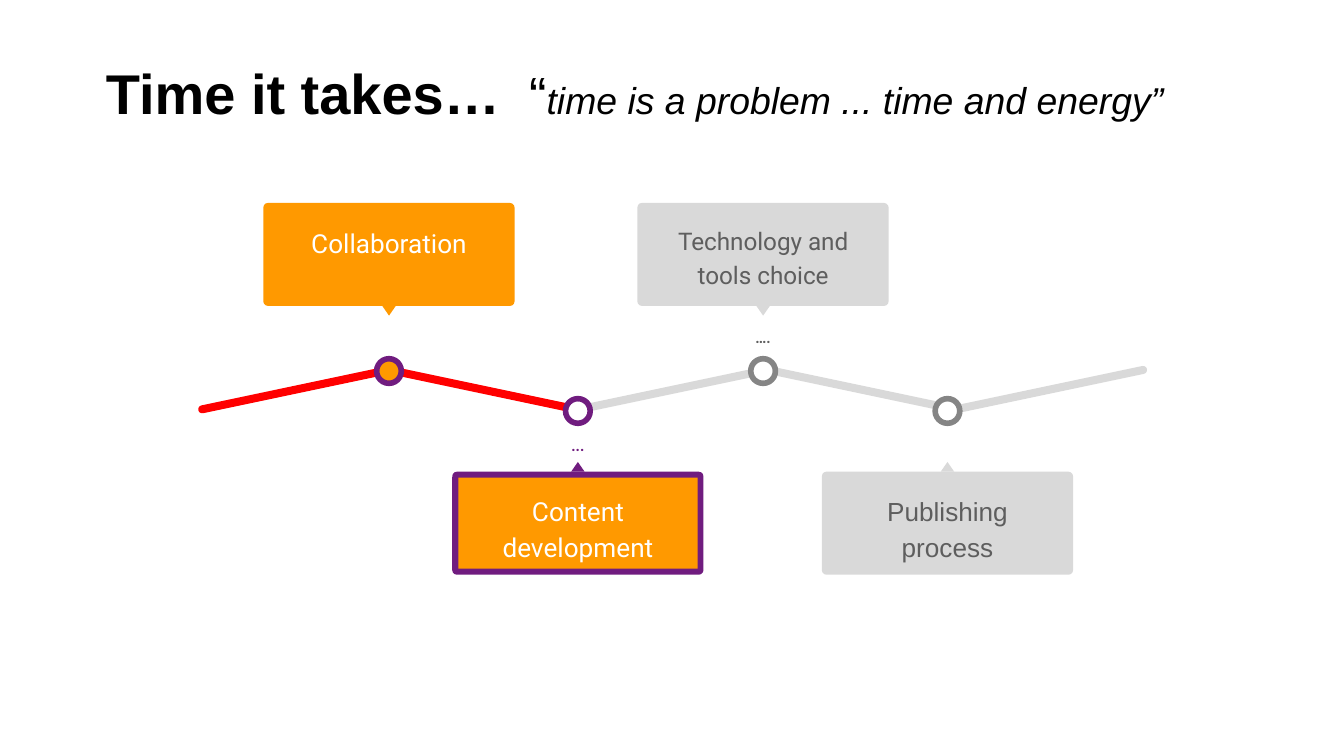
from dataclasses import dataclass

from pptx import Presentation
from pptx.dml.color import RGBColor
from pptx.enum.shapes import MSO_SHAPE as Preset
from pptx.enum.text import MSO_ANCHOR as Anchor, PP_ALIGN as Align
from pptx.util import Pt

WHITE = RGBColor(0xFF, 0xFF, 0xFF)
BLACK = RGBColor(0x00, 0x00, 0x00)
RED = RGBColor(0xFF, 0x00, 0x00)
ORANGE = RGBColor(0xFF, 0x99, 0x00)
PURPLE = RGBColor(0x70, 0x1C, 0x7F)
LIGHT_GRAY = RGBColor(0xD9, 0xD9, 0xD9)
MID_GRAY = RGBColor(0x85, 0x85, 0x85)
DARK_GRAY = RGBColor(0x5E, 0x5E, 0x5E)

# Timeline geometry, in points
BAR_WIDTH, BAR_HEIGHT, BAR_TOP, BAR_TILT = 106.6, 4.3, 206.6, 11.9
CARD_WIDTH, CARD_HEIGHT, CARD_BORDER = 134.6, 55.2, 3.2
POINTER_WIDTH, POINTER_HEIGHT = 7.2, 5.2
NODE_SIZE = 13.2
DOTS_WIDTH, DOTS_HEIGHT = 54.7, 21.6


@dataclass
class Milestone:
    center: float
    above: bool
    label: str
    frame: RGBColor
    panel: RGBColor
    ink: RGBColor
    node_fill: RGBColor
    node_line: RGBColor
    font: str = "Roboto"
    size: int = 14
    dots: str = ""


MILESTONES = [
    Milestone(507.6, False, "Publishing process", LIGHT_GRAY, LIGHT_GRAY,
              DARK_GRAY, WHITE, MID_GRAY, font="Arial"),
    Milestone(309.6, False, "Content development", PURPLE, ORANGE,
              WHITE, WHITE, PURPLE, dots="..."),
    Milestone(208.4, True, "Collaboration", ORANGE, ORANGE,
              WHITE, ORANGE, PURPLE),
    Milestone(408.8, True, "Technology and tools choice", LIGHT_GRAY, LIGHT_GRAY,
              DARK_GRAY, WHITE, MID_GRAY, size=13, dots="…."),
]

# Bar centres with colours, from right to left; tilt alternates
BARS = [(562.3, LIGHT_GRAY), (461.5, LIGHT_GRAY), (360.7, LIGHT_GRAY),
        (258.5, RED), (158.4, RED)]


def add_box(slide, preset, left, top, width, height, fill, line=None, weight=0):
    shape = slide.shapes.add_shape(preset, Pt(left), Pt(top), Pt(width), Pt(height))
    shape.shadow.inherit = False
    shape.fill.solid()
    shape.fill.fore_color.rgb = fill
    if line is None:
        shape.line.fill.background()
    else:
        shape.line.color.rgb = line
        shape.line.width = Pt(weight)
    return shape


def prepare_frame(shape, top_inset=7.2):
    frame = shape.text_frame
    settings = dict(word_wrap=True, vertical_anchor=Anchor.TOP,
                    margin_left=Pt(7.2), margin_right=Pt(7.2),
                    margin_top=Pt(top_inset), margin_bottom=Pt(7.2))
    for name, value in settings.items():
        setattr(frame, name, value)
    return frame.paragraphs[0]


def add_run(paragraph, text, color, **font_values):
    run = paragraph.add_run()
    run.text = text
    run.font.color.rgb = color
    for name, value in font_values.items():
        setattr(run.font, name, value)


def write_label(shape, text, color, **font_values):
    paragraph = prepare_frame(shape)
    settings = dict(alignment=Align.CENTER, line_spacing=1.15, space_after=Pt(16))
    for name, value in settings.items():
        setattr(paragraph, name, value)
    add_run(paragraph, text, color, **font_values)


def add_title(slide):
    shape = add_box(slide, Preset.RECTANGLE, 49.7, 21.6, 620.6, 78.5, WHITE, WHITE, 0.75)
    paragraph = prepare_frame(shape, top_inset=9.8)
    paragraph.alignment = Align.LEFT
    parts = [
        ("Time it takes…", dict(size=Pt(30), bold=True)),
        ("  “", dict(size=Pt(28))),
        ("time is a problem ... time and energy”", dict(size=Pt(20), italic=True)),
    ]
    for text, values in parts:
        add_run(paragraph, text, BLACK, name="Arial", **values)


def add_bar(slide, center, color, tilt):
    bar = add_box(slide, Preset.ROUNDED_RECTANGLE, center - BAR_WIDTH / 2, BAR_TOP,
                  BAR_WIDTH, BAR_HEIGHT, color)
    bar.adjustments[0] = 0.5
    bar.rotation = tilt


def add_milestone(slide, milestone):
    center, above = milestone.center, milestone.above
    card_top = 108.7 if above else 252.7
    pointer_top = card_top + CARD_HEIGHT if above else card_top - POINTER_HEIGHT
    node_top = 192.2 if above else 213.6
    dots_top = 169.2 if above else 226.8

    # Card with its pointer and text panel
    card = add_box(slide, Preset.ROUNDED_RECTANGLE, center - CARD_WIDTH / 2, card_top,
                   CARD_WIDTH, CARD_HEIGHT, milestone.frame)
    card.adjustments[0] = 0.045
    pointer = add_box(slide, Preset.ISOSCELES_TRIANGLE, center - POINTER_WIDTH / 2,
                      pointer_top, POINTER_WIDTH, POINTER_HEIGHT, milestone.frame)
    pointer.rotation = 180 if above else 0
    panel = add_box(slide, Preset.RECTANGLE, center - CARD_WIDTH / 2 + CARD_BORDER,
                    card_top + CARD_BORDER, CARD_WIDTH - 2 * CARD_BORDER,
                    CARD_HEIGHT - 2 * CARD_BORDER, milestone.panel)
    write_label(panel, milestone.label, milestone.ink,
                name=milestone.font, size=Pt(milestone.size))

    # Node on the line, and the small dots beside it
    add_box(slide, Preset.OVAL, center - NODE_SIZE / 2, node_top, NODE_SIZE, NODE_SIZE,
            milestone.node_fill, milestone.node_line, 3)
    if milestone.dots:
        dots = slide.shapes.add_textbox(Pt(center - DOTS_WIDTH / 2), Pt(dots_top),
                                        Pt(DOTS_WIDTH), Pt(DOTS_HEIGHT))
        color = DARK_GRAY if above else PURPLE
        write_label(dots, milestone.dots, color, name="Roboto", size=Pt(8), bold=True)


def main():
    presentation = Presentation()
    presentation.slide_width, presentation.slide_height = Pt(720), Pt(405)
    slide = presentation.slides.add_slide(presentation.slide_layouts[6])

    add_title(slide)
    for index, (center, color) in enumerate(BARS):
        add_bar(slide, center, color, BAR_TILT if index % 2 else -BAR_TILT)
    for milestone in MILESTONES:
        add_milestone(slide, milestone)

    presentation.save("out.pptx")


if __name__ == "__main__":
    main()
